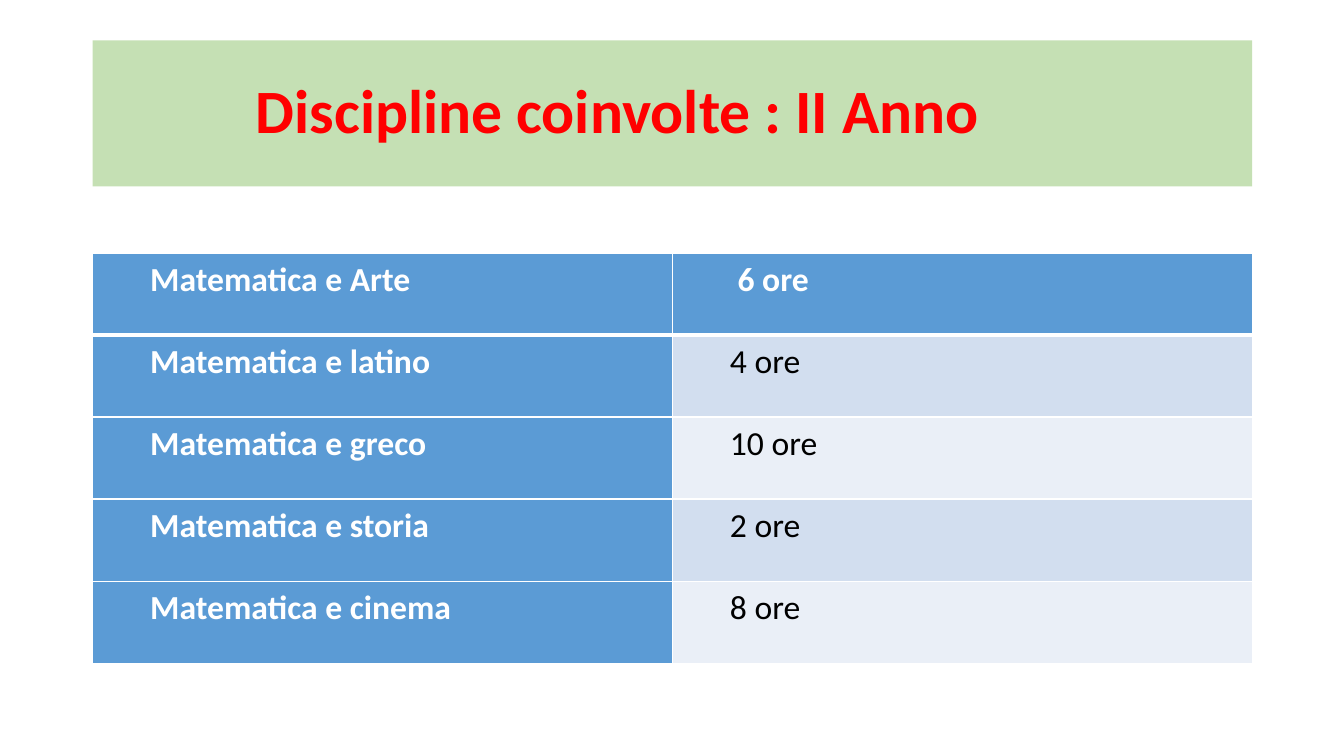
from lxml.etree import SubElement
from pptx import Presentation
from pptx.dml.color import RGBColor
from pptx.enum.text import MSO_ANCHOR
from pptx.oxml.ns import qn
from pptx.util import Inches, Pt

# Content
TITLE = "Discipline coinvolte : II Anno"
HOURS = [
    ("Matematica e Arte", " 6 ore"),
    ("Matematica e latino", "4 ore"),
    ("Matematica e greco", "10 ore"),
    ("Matematica e storia", "2 ore"),
    ("Matematica e cinema", "8 ore"),
]
COLORS = {
    "banner": "C5E0B4", "title": "FF0000", "head": "5B9BD5", "odd": "D2DEEF",
    "even": "EAEFF7", "light": "FFFFFF", "dark": "000000",
}
FONT = "Calibri"

# Layout, in inches
WIDTH, HEIGHT = 13.33, 7.5
LEFT, CONTENT_WIDTH = 0.92, 11.5
BANNER_TOP, BANNER_HEIGHT = 0.4, 1.45
TABLE_TOP, TABLE_HEIGHT = 2.51, 4.07


def color(name):
    return RGBColor.from_string(COLORS[name])


def write(para, text, size, ink, bold, indent, spacing):
    properties = para._p.get_or_add_pPr()
    properties.set("marL", str(Inches(indent)))
    properties.set("indent", "0")
    para.line_spacing = spacing
    span = para.add_run()
    span.text = text
    span.font.name = FONT
    span.font.size = Pt(size)
    span.font.bold = bold
    span.font.color.rgb = color(ink)


def add_borders(cell, widths):
    properties = cell._tc.get_or_add_tcPr()
    for side, width in widths.items():
        line = SubElement(properties, qn(f"a:ln{side}"), w=str(Pt(width)))
        fill = SubElement(line, qn("a:solidFill"))
        SubElement(fill, qn("a:srgbClr"), val=COLORS["light"])


deck = Presentation()
deck.slide_width, deck.slide_height = Inches(WIDTH), Inches(HEIGHT)
page = deck.slides.add_slide(deck.slide_layouts[6])

# Title banner
banner = page.shapes.add_textbox(Inches(LEFT), Inches(BANNER_TOP),
                                 Inches(CONTENT_WIDTH), Inches(BANNER_HEIGHT))
banner.fill.solid()
banner.fill.fore_color.rgb = color("banner")
banner.text_frame.word_wrap = True
banner.text_frame.vertical_anchor = MSO_ANCHOR.MIDDLE
write(banner.text_frame.paragraphs[0], TITLE, 44, "title", True, 1.52, 0.9)

# Table of hours
table = page.shapes.add_table(len(HOURS), 2, Inches(LEFT), Inches(TABLE_TOP),
                              Inches(CONTENT_WIDTH), Inches(TABLE_HEIGHT)).table
table.first_col = True
for row, texts in enumerate(HOURS):
    for column, text in enumerate(texts):
        cell = table.cell(row, column)
        is_head = row == 0 or column == 0
        cell.margin_left = cell.margin_right = Inches(0.07)
        cell.margin_top = cell.margin_bottom = 0
        write(cell.text_frame.paragraphs[0], text, 24,
              "light" if is_head else "dark", is_head, 0.5, 1.15)
        add_borders(cell, {"L": 1, "R": 1, "T": 3 if row == 1 else 1,
                           "B": 3 if row == 0 else 1})
        cell.fill.solid()
        cell.fill.fore_color.rgb = color(
            "head" if is_head else "odd" if row % 2 else "even")

deck.save("out.pptx")
